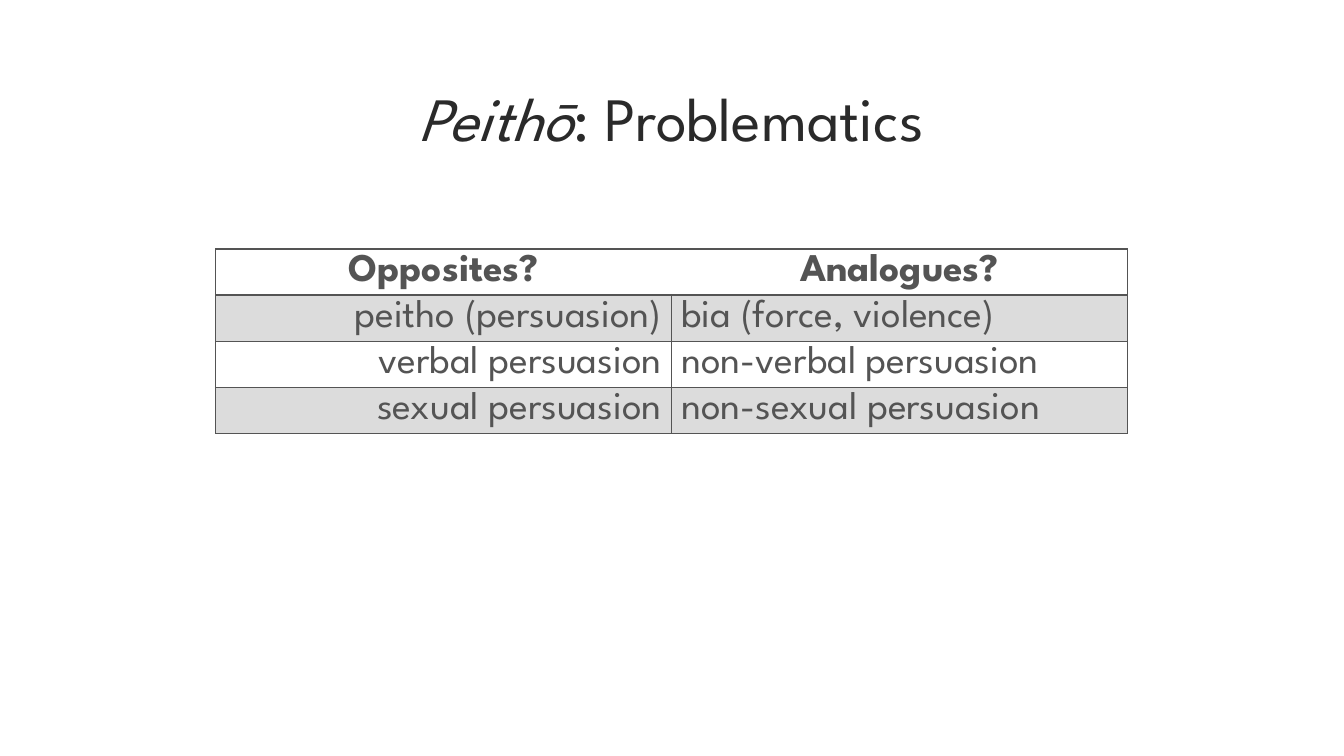
import dataclasses
import typing

import lxml.etree
import pptx
import pptx.dml.color
import pptx.enum.text
import pptx.oxml.ns
import pptx.util

Align = pptx.enum.text.PP_ALIGN
Anchor = pptx.enum.text.MSO_ANCHOR
qn = pptx.oxml.ns.qn


@dataclasses.dataclass(frozen=True)
class Theme:
    face: str = "League Spartan"
    dark: str = "2A2A2A"
    grey: str = "545454"
    tint: int = 20
    head: int = 44
    body: int = 28
    thin: int = 1
    thick: int = 2


@dataclasses.dataclass(frozen=True)
class Box:
    """Place and size as shares of the slide."""
    left: float
    top: float
    width: float
    height: float


@dataclasses.dataclass(frozen=True)
class Entry:
    text: str
    align: Align
    bold: bool = False
    shade: bool = False


THEME = Theme()
WIDE = pptx.util.Inches(13.33)
HIGH = pptx.util.Inches(7.5)
TITLE = Box(2.16 / 13.33, 0.58 / 7.5, 9 / 13.33, 1.25 / 7.5)
TABLE = Box(2.14 / 13.33, 2.47 / 7.5, 9.04 / 13.33, 1.64 / 7.5)

HEADS = ("Opposites?", "Analogues?")
PAIRS = (
    ("peitho (persuasion)", "bia (force, violence)"),
    ("verbal persuasion", "non-verbal persuasion"),
    ("sexual persuasion", "non-sexual persuasion"),
)


def apply(item: typing.Any, form: dict[str, typing.Any]) -> None:
    for key, value in form.items():
        setattr(item, key, value)


def place(box: Box) -> dict[str, int]:
    return {
        "left": round(box.left * WIDE), "top": round(box.top * HIGH),
        "width": round(box.width * WIDE), "height": round(box.height * HIGH),
    }


def write(para: typing.Any, text: str, size: int, tone: str, **form: bool) -> None:
    run = para.add_run()
    run.text = text
    apply(run.font, {"name": THEME.face, "size": pptx.util.Pt(size), **form})
    run.font.color.rgb = pptx.dml.color.RGBColor.from_string(tone)


def edge(cell: typing.Any, side: str, width: int) -> None:
    """Rule one side of a cell; zero width leaves it open."""
    props = cell._tc.get_or_add_tcPr()
    line = lxml.etree.SubElement(props, qn(f"a:ln{side}"), w=str(pptx.util.Pt(width)))
    if width:
        fill = lxml.etree.SubElement(line, qn("a:solidFill"))
        lxml.etree.SubElement(fill, qn("a:srgbClr"), val=THEME.grey)
    else:
        lxml.etree.SubElement(line, qn("a:noFill"))


def paint(cell: typing.Any, shade: bool) -> None:
    if not shade:
        cell.fill.background()
        return
    cell.fill.solid()
    cell.fill.fore_color.rgb = pptx.dml.color.RGBColor.from_string(THEME.grey)
    tone = cell._tc.tcPr.find(f"{qn('a:solidFill')}/{qn('a:srgbClr')}")
    lxml.etree.SubElement(tone, qn("a:alpha"), val=str(THEME.tint * 1000))


def draw_cell(cell: typing.Any, entry: Entry, edges: dict[str, int]) -> None:
    for side, width in edges.items():
        edge(cell, side, width)
    paint(cell, entry.shade)
    para = cell.text_frame.paragraphs[0]
    para.alignment = entry.align
    write(para, entry.text, THEME.body, THEME.grey, bold=entry.bold)


def draw_title(slide: typing.Any) -> None:
    title = slide.shapes.title
    apply(title, place(TITLE))
    side, rim = pptx.util.Inches(0.2), pptx.util.Inches(0.1)
    apply(title.text_frame, {
        "word_wrap": True, "vertical_anchor": Anchor.MIDDLE,
        "margin_left": side, "margin_right": side,
        "margin_top": rim, "margin_bottom": rim,
    })
    para = title.text_frame.paragraphs[0]
    apply(para, {"alignment": Align.CENTER, "line_spacing": 0.9})
    write(para, "Peithō", THEME.head, THEME.dark, italic=True)
    write(para, ": Problematics", THEME.head, THEME.dark, italic=False)


def draw_table(slide: typing.Any) -> None:
    rows = [[Entry(text, Align.CENTER, bold=True) for text in HEADS]]
    for index, pair in enumerate(PAIRS):
        rows.append([Entry(text, align, shade=index % 2 == 0)
                     for text, align in zip(pair, (Align.RIGHT, Align.LEFT))])
    frame = slide.shapes.add_table(len(rows), len(HEADS), **place(TABLE))
    table = frame.table
    apply(table, {"first_row": False, "horz_banding": False})
    last = len(HEADS) - 1
    for r, row in enumerate(rows):
        for c, entry in enumerate(row):
            # The header has no rule between its cells
            edges = {
                "L": 0 if r == 0 and c > 0 else THEME.thin,
                "R": 0 if r == 0 and c < last else THEME.thin,
                "T": THEME.thick if r == 1 else THEME.thin,
                "B": THEME.thick if r == 0 else THEME.thin,
            }
            draw_cell(table.cell(r, c), entry, edges)


def main() -> None:
    deck = pptx.Presentation()
    apply(deck, {"slide_width": WIDE, "slide_height": HIGH})
    slide = deck.slides.add_slide(deck.slide_layouts.get_by_name("Title Only"))
    draw_title(slide)
    draw_table(slide)
    deck.save("out.pptx")


if __name__ == "__main__":
    main()
